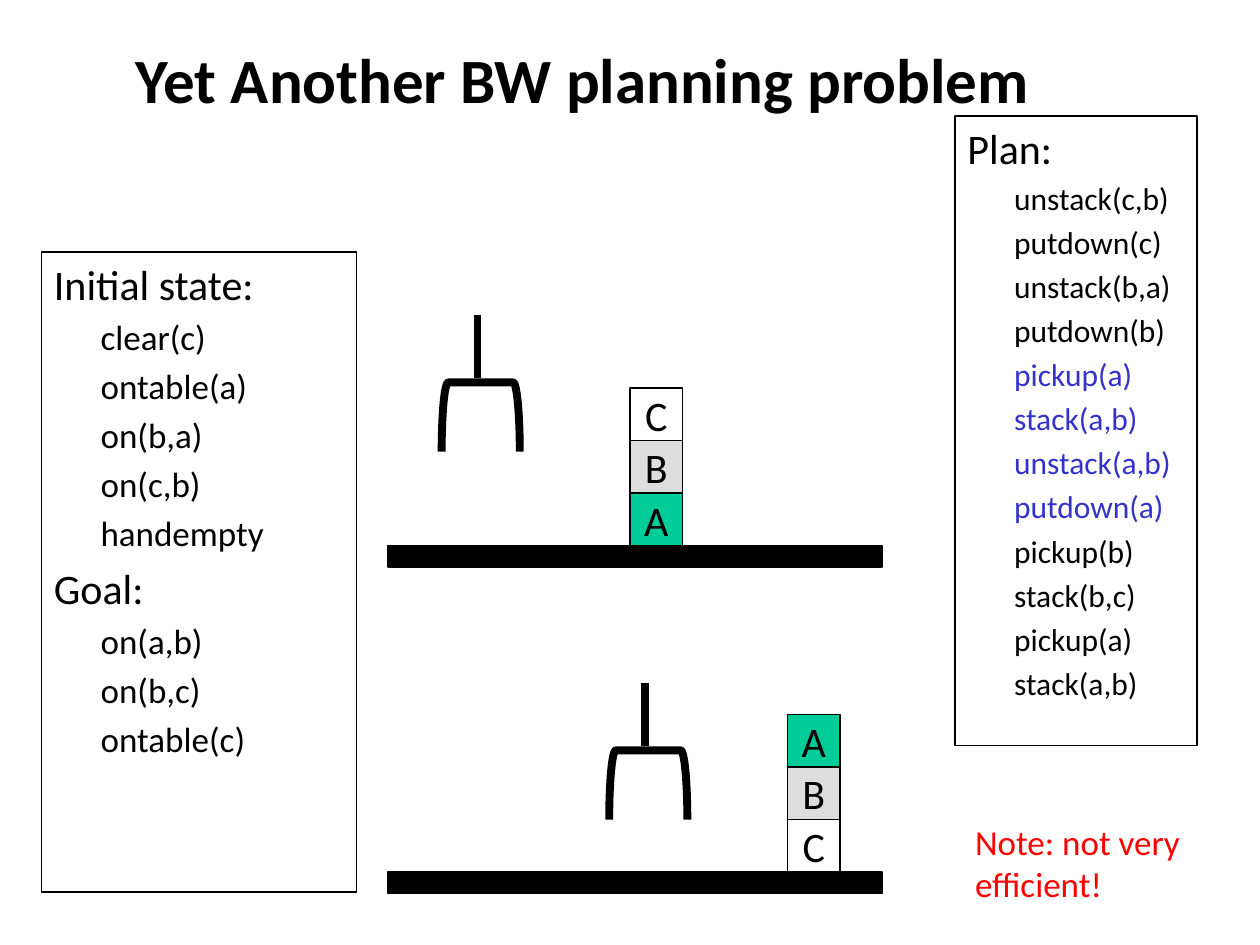
from lxml import etree
from pptx import Presentation
from pptx.dml.color import RGBColor
from pptx.enum.shapes import MSO_CONNECTOR, MSO_SHAPE
from pptx.enum.text import MSO_ANCHOR, PP_ALIGN
from pptx.oxml.ns import qn
from pptx.util import Inches, Pt

RECT = MSO_SHAPE.RECTANGLE
BRACKET = MSO_SHAPE.RIGHT_BRACKET
STRAIGHT = MSO_CONNECTOR.STRAIGHT
MIDDLE, TOP = MSO_ANCHOR.MIDDLE, MSO_ANCHOR.TOP
CENTER, LEFT = PP_ALIGN.CENTER, PP_ALIGN.LEFT

BLACK = RGBColor(0x00, 0x00, 0x00)
GREEN = RGBColor(0x00, 0xCC, 0x99)
GREY = RGBColor(0xDD, 0xDD, 0xDD)
BLUE = RGBColor(0x33, 0x33, 0xCC)
RED = RGBColor(0xFF, 0x00, 0x00)

BLOCK = 5 / 12
BLOCK_FILLS = {"A": GREEN, "B": GREY, "C": None}

STATES = [
    ("Initial state:", ["clear(c)", "ontable(a)", "on(b,a)", "on(c,b)", "handempty"]),
    ("Goal:", ["on(a,b)", "on(b,c)", "ontable(c)"]),
]
PLAN = [
    ("Plan:", ["unstack(c,b)", "putdown(c)", "unstack(b,a)", "putdown(b)",
               "pickup(a)", "stack(a,b)", "unstack(a,b)", "putdown(a)",
               "pickup(b)", "stack(b,c)", "pickup(a)", "stack(a,b)"]),
]
WASTED_STEPS = range(4, 8)


class SlideBuilder:
    font = "Calibri"

    def __init__(self, prs):
        self.slide = prs.slides.add_slide(prs.slide_layouts[5])
        self.shapes = self.slide.shapes

    def run(self, p, text, size, color=BLACK, bold=False):
        r = p.add_run()
        r.text = text
        r.font.name = self.font
        r.font.size = Pt(size)
        r.font.bold = bold
        r.font.color.rgb = color

    def title(self, text, x, y, w, h):
        sp = self.shapes.title
        sp.left, sp.top, sp.width, sp.height = map(Inches, (x, y, w, h))
        tf = sp.text_frame
        tf.vertical_anchor = MIDDLE
        p = tf.paragraphs[0]
        p.alignment = CENTER
        self.run(p, text, 36, bold=True)

    def shape(self, kind, x, y, w, h, fill=None, weight=0.75):
        sp = self.shapes.add_shape(kind, *map(Inches, (x, y, w, h)))
        sp.shadow.inherit = False
        if fill is None:
            sp.fill.background()
        else:
            sp.fill.solid()
            sp.fill.fore_color.rgb = fill
        sp.line.color.rgb = BLACK
        sp.line.width = Pt(weight)
        return sp

    def paragraph(self, tf, first, text, size, margin, color=BLACK):
        p = tf.paragraphs[0] if first else tf.add_paragraph()
        p.alignment = LEFT
        pPr = p._p.get_or_add_pPr()
        pPr.set("marL", str(Inches(margin)))
        pPr.set("indent", str(Inches(-0.25)))
        before = etree.SubElement(pPr, qn("a:spcBef"))
        etree.SubElement(before, qn("a:spcPct")).set("val", "20000")
        self.run(p, text, size, color)

    def panel(self, sections, x, y, w, h, size, blue_steps=()):
        tf = self.shape(RECT, x, y, w, h).text_frame
        tf.word_wrap = True
        tf.vertical_anchor = TOP
        for n, (heading, items) in enumerate(sections):
            self.paragraph(tf, n == 0, heading, 24, 0.25)
            for i, item in enumerate(items):
                color = BLUE if i in blue_steps else BLACK
                self.paragraph(tf, False, item, size, 0.62, color)

    def stack(self, letters, x, table_y):
        self.shape(RECT, 3.08, table_y, 3.92, 0.17, BLACK)
        for level, letter in enumerate(letters, 1):
            sp = self.shape(RECT, x, table_y - level * BLOCK, BLOCK, BLOCK,
                            BLOCK_FILLS[letter])
            tf = sp.text_frame
            tf.word_wrap = False
            tf.vertical_anchor = MIDDLE
            p = tf.paragraphs[0]
            p.alignment = CENTER
            self.run(p, letter, 24)

    def hand(self, x, y):
        sp = self.shape(BRACKET, x - 0.25, y + 0.5, 0.55, 0.62, weight=4.5)
        sp.rotation = 270
        sp.adjustments[0] = 0.095
        arm = self.shapes.add_connector(
            STRAIGHT, Inches(x), Inches(y), Inches(x), Inches(y + 0.5))
        arm.line.color.rgb = BLACK
        arm.line.width = Pt(4.5)
        etree.SubElement(arm._element.spPr, qn("a:effectLst"))

    def note(self, text, x, y, w, h):
        tf = self.shapes.add_textbox(*map(Inches, (x, y, w, h))).text_frame
        tf.word_wrap = True
        self.run(tf.paragraphs[0], text, 20, RED)


def main():
    prs = Presentation()
    prs.slide_width, prs.slide_height = Inches(10), Inches(7.5)
    s = SlideBuilder(prs)
    s.title("Yet Another BW planning problem", 0, 0, 9.25, 1.25)
    s.panel(STATES, 0.33, 2, 2.5, 5.08, 20)
    s.stack("ABC", 5, 4.33)
    s.hand(3.79, 2.5)
    s.stack("CBA", 6.25, 6.92)
    s.hand(5.12, 5.42)
    s.panel(PLAN, 7.58, 0.92, 1.92, 5, 18, WASTED_STEPS)
    s.note("Note: not very efficient!", 7.64, 6.46, 2.03, 0.77)
    prs.save("out.pptx")


if __name__ == "__main__":
    main()
